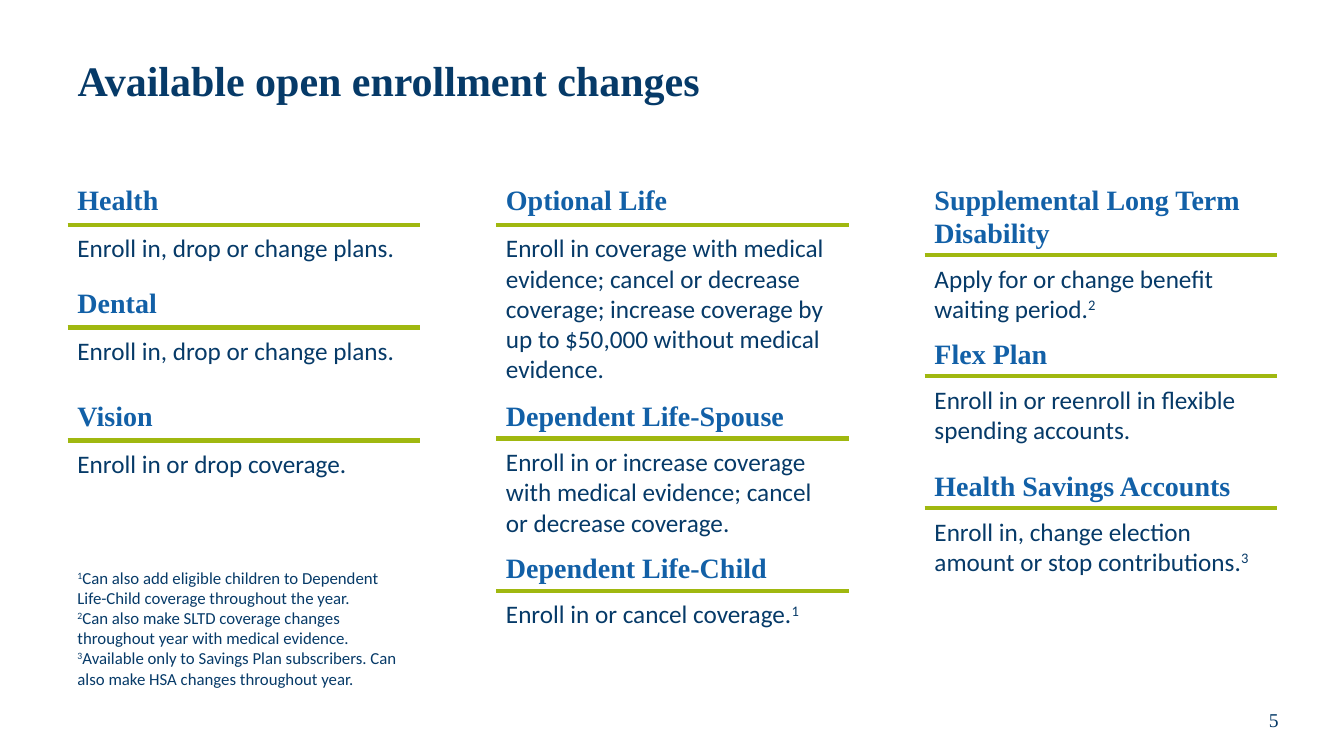
from lxml.etree import SubElement
from pptx import Presentation
from pptx.dml.color import RGBColor
from pptx.enum.shapes import MSO_CONNECTOR
from pptx.enum.text import MSO_ANCHOR, MSO_AUTO_SIZE, PP_ALIGN
from pptx.oxml.ns import qn
from pptx.util import Inches, Pt

COLORS = {"navy": "063A68", "blue": "1260A7", "green": "A0B810"}
SERIF, SANS = "Times New Roman", "Calibri"
COLUMN_LEFT, COLUMN_STEP, COLUMN_W = 0.67, 4.25, 3.5
PADDING, HEADING_LINE, BODY_LINE = 0.1, 0.335, 0.3
RULE_GAP = 0.03

# Per column: heading, heading lines, heading top, rule position, body, body lines, footnote mark
COLUMNS = [
    [
        ("Health", 1, 1.76, 2.23, "Enroll in, drop or change plans.", 1, ""),
        ("Dental", 1, 2.78, 3.25, "Enroll in, drop or change plans.", 1, ""),
        ("Vision", 1, 3.9, 4.37, "Enroll in or drop coverage.", 1, ""),
    ],
    [
        ("Optional Life", 1, 1.76, 2.23,
         "Enroll in coverage with medical evidence; cancel or decrease coverage; "
         "increase coverage by up to $50,000 without medical evidence.", 5, ""),
        ("Dependent Life-Spouse", 1, 3.9, 4.35,
         "Enroll in or increase coverage with medical evidence; cancel or decrease coverage.", 3, ""),
        ("Dependent Life-Child", 1, 5.41, 5.86, "Enroll in or cancel coverage.", 1, "1"),
    ],
    [
        ("Supplemental Long Term Disability", 2, 1.76, 2.53,
         "Apply for or change benefit waiting period.", 2, "2"),
        ("Flex Plan", 1, 3.29, 3.73,
         "Enroll in or reenroll in flexible spending accounts.", 2, ""),
        ("Health Savings Accounts", 1, 4.6, 5.04,
         "Enroll in, change election amount or stop contributions.", 2, "3"),
    ],
]
FOOTNOTES = [
    "Can also add eligible children to Dependent Life-Child coverage throughout the year.",
    "Can also make SLTD coverage changes throughout year with medical evidence.",
    "Available only to Savings Plan subscribers. Can also make HSA changes throughout year.",
]


def color(name):
    return RGBColor.from_string(COLORS[name])


def style(p, size, font, color_name, bold=False):
    p.font.size = Pt(size)
    p.font.name = font
    p.font.bold = bold
    p.font.color.rgb = color(color_name)


def add_text_box(shapes, left, top, width, height):
    tf = shapes.add_textbox(Inches(left), Inches(top), Inches(width), Inches(height)).text_frame
    tf.word_wrap = True
    tf.auto_size = MSO_AUTO_SIZE.SHAPE_TO_FIT_TEXT
    return tf


def add_run(p, text, superscript=False):
    r = p.add_run()
    r.text = text
    if superscript:
        r._r.get_or_add_rPr().set("baseline", "30000")


def add_title(s, left, top, width, height):
    title = s.shapes.title
    title.left, title.top = Inches(left), Inches(top)
    title.width, title.height = Inches(width), Inches(height)
    tf = title.text_frame
    tf.text = "Available open enrollment changes"
    tf.auto_size = MSO_AUTO_SIZE.NONE
    tf.vertical_anchor = MSO_ANCHOR.MIDDLE
    p = tf.paragraphs[0]
    p.alignment = PP_ALIGN.LEFT
    p.line_spacing = 0.9
    style(p, 30, SERIF, "navy", bold=True)


def add_section(s, left, width, section):
    """Add one benefit: heading, green rule and the changes allowed."""
    heading, heading_lines, top, rule_y, body, body_lines, mark = section
    shapes = s.shapes.add_group_shape().shapes

    p = add_text_box(shapes, left, top, width, PADDING + HEADING_LINE * heading_lines).paragraphs[0]
    add_run(p, heading)
    style(p, 20, SERIF, "blue", bold=True)

    rule = shapes.add_connector(MSO_CONNECTOR.STRAIGHT, Inches(left), Inches(rule_y),
                                Inches(left + width), Inches(rule_y))
    rule.line.color.rgb = color("green")
    rule.line.width = Pt(3)
    SubElement(rule._element.spPr, qn("a:effectLst"))

    p = add_text_box(shapes, left, rule_y + RULE_GAP, width,
                     PADDING + BODY_LINE * body_lines).paragraphs[0]
    add_run(p, body)
    if mark:
        add_run(p, mark, superscript=True)
    style(p, 18, SANS, "navy")


def add_footnotes(s, left, top, width, height):
    tf = add_text_box(s.shapes, left, top, width, height)
    for number, note in enumerate(FOOTNOTES, 1):
        p = tf.paragraphs[0] if number == 1 else tf.add_paragraph()
        add_run(p, str(number), superscript=True)
        add_run(p, note)
        style(p, 12, SANS, "navy")


def add_page_number(s, left, top, width, height):
    tf = add_text_box(s.shapes, left, top, width, height)
    tf.auto_size = MSO_AUTO_SIZE.NONE
    tf.vertical_anchor = MSO_ANCHOR.MIDDLE
    p = tf.paragraphs[0]
    p.alignment = PP_ALIGN.CENTER
    add_run(p, "5")
    style(p, 14, SERIF, "navy")


def main():
    prs = Presentation()
    prs.slide_width, prs.slide_height = Inches(13.33), Inches(7.5)
    s = prs.slides.add_slide(prs.slide_layouts[5])
    add_title(s, COLUMN_LEFT, 0.25, 12, 1.15)
    for i, sections in enumerate(COLUMNS):
        for section in sections:
            add_section(s, COLUMN_LEFT + i * COLUMN_STEP, COLUMN_W, section)
    add_footnotes(s, COLUMN_LEFT, 5.58, COLUMN_W, 1.31)
    add_page_number(s, 12.05, 6.89, 1.17, 0.5)
    prs.save("out.pptx")


if __name__ == "__main__":
    main()
